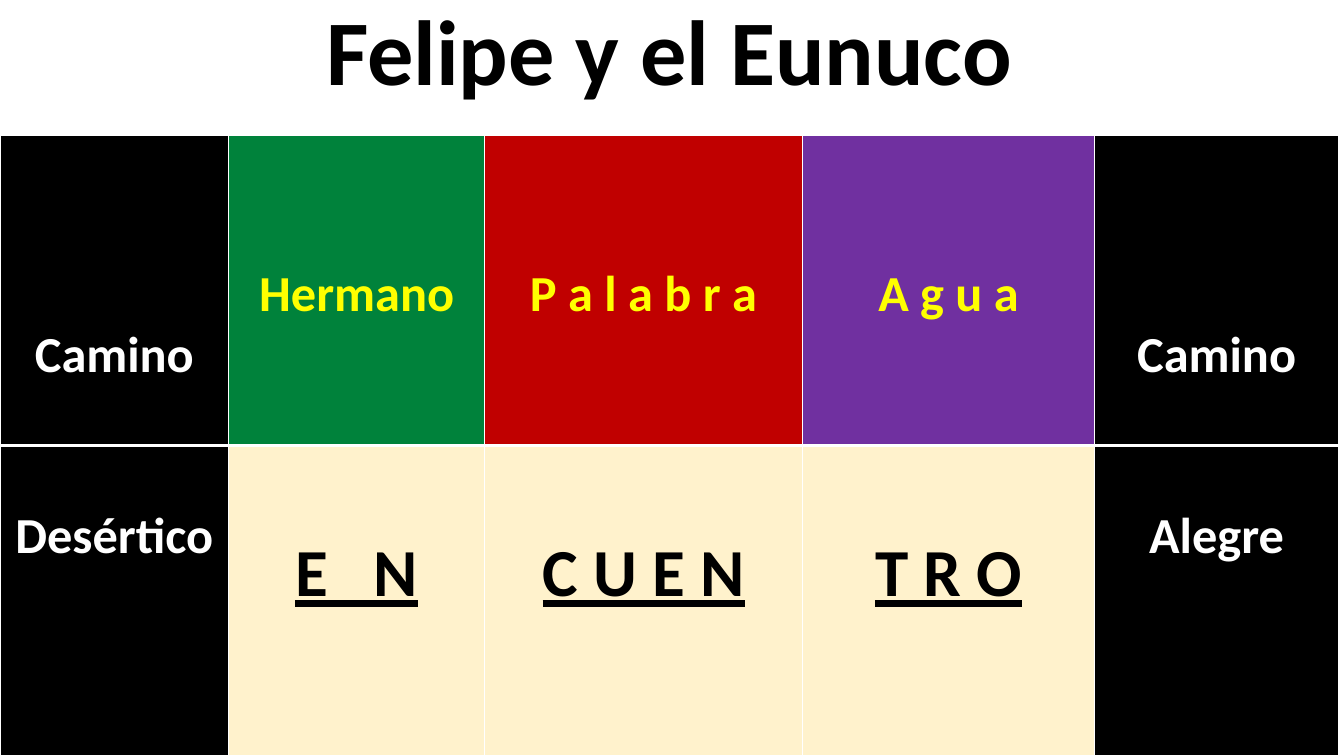
import dataclasses

import lxml.etree
import pptx
import pptx.dml.color
import pptx.enum.text
import pptx.oxml.ns
import pptx.util

Pt = pptx.util.Pt
Color = pptx.dml.color.RGBColor.from_string


@dataclasses.dataclass(frozen=True)
class Theme:
    font: str = "Calibri"
    black: str = "000000"
    white: str = "FFFFFF"
    yellow: str = "FFFF00"
    green: str = "00823B"
    red: str = "C00000"
    purple: str = "7030A0"
    cream: str = "FFF2CC"
    title_size: float = 66
    label_size: float = 36
    meeting_size: float = 48


THEME = Theme()


@dataclasses.dataclass(frozen=True)
class Panel:
    """One table cell; drop is the distance from its top to the text."""
    text: str
    fill: str
    color: str
    drop: float
    size: float = THEME.label_size
    underline: bool = False


def road(text: str, drop: float) -> Panel:
    return Panel(text, THEME.black, THEME.white, drop)


def gift(text: str, fill: str) -> Panel:
    return Panel(text, fill, THEME.yellow, 91.5)


def meeting(text: str) -> Panel:
    return Panel(text, THEME.cream, THEME.black, 62.2, THEME.meeting_size, True)


SLIDE_SIZE = (960, 540)
TABLE_WIDTH = 956.2
TABLE_TOP = 96.5
ROW_HEIGHT = 221.75
COLUMN_WIDTHS = (163.4, 182.9, 226.8, 208.9, 174.2)
THIN, THICK = 1, 3
PANELS = (
    (road("Camino", 135.4), gift("Hermano", THEME.green),
     gift("P a l a b r a", THEME.red), gift("A g u a", THEME.purple),
     road("Camino", 135.4)),
    (road("Desértico", 42.7), meeting("E   N"), meeting("C U E N"),
     meeting("T R O"), road("Alegre", 42.7)),
)


def write_text(text_frame, text: str, *, size: float, color: str,
               underline: bool = False, line_spacing: float = 1.0) -> None:
    paragraph = text_frame.paragraphs[0]
    paragraph.alignment = pptx.enum.text.PP_ALIGN.CENTER
    paragraph.line_spacing = line_spacing
    run = paragraph.add_run()
    run.text = text
    run.font.name = THEME.font
    run.font.size = Pt(size)
    run.font.bold = True
    run.font.underline = underline
    run.font.color.rgb = Color(color)


def set_borders(cell, top: float, bottom: float) -> None:
    properties = cell._tc.get_or_add_tcPr()
    widths = {"a:lnL": THIN, "a:lnR": THIN, "a:lnT": top, "a:lnB": bottom}
    for index, (tag, width) in enumerate(widths.items()):
        line = lxml.etree.Element(pptx.oxml.ns.qn(tag), w=str(Pt(width)))
        fill = lxml.etree.SubElement(line, pptx.oxml.ns.qn("a:solidFill"))
        lxml.etree.SubElement(fill, pptx.oxml.ns.qn("a:srgbClr"), val=THEME.white)
        properties.insert(index, line)


def draw_panel(cell, panel: Panel, top: float, bottom: float) -> None:
    cell.fill.solid()
    cell.fill.fore_color.rgb = Color(panel.fill)
    cell.margin_top = Pt(panel.drop)
    cell.vertical_anchor = pptx.enum.text.MSO_ANCHOR.TOP
    write_text(cell.text_frame, panel.text, size=panel.size,
               color=panel.color, underline=panel.underline)
    set_borders(cell, top, bottom)


def draw_title(slide) -> None:
    shape = slide.shapes.add_textbox(0, 0, Pt(TABLE_WIDTH), Pt(TABLE_TOP))
    text_frame = shape.text_frame
    text_frame.word_wrap = True
    text_frame.margin_top = Pt(3.8)
    text_frame.vertical_anchor = pptx.enum.text.MSO_ANCHOR.TOP
    write_text(text_frame, "Felipe y el Eunuco", size=THEME.title_size,
               color=THEME.black, line_spacing=0.9)


def draw_table(slide) -> None:
    table = slide.shapes.add_table(
        len(PANELS), len(COLUMN_WIDTHS), 0, Pt(TABLE_TOP),
        Pt(TABLE_WIDTH), Pt(ROW_HEIGHT * len(PANELS))).table
    for column, width in zip(table.columns, COLUMN_WIDTHS):
        column.width = Pt(width)
    # The thick rule separates the two rows
    borders = ((THIN, THICK), (THICK, THIN))
    for row, panels, (top, bottom) in zip(table.rows, PANELS, borders):
        row.height = Pt(ROW_HEIGHT)
        for cell, panel in zip(row.cells, panels):
            draw_panel(cell, panel, top, bottom)


def main() -> None:
    presentation = pptx.Presentation()
    presentation.slide_width, presentation.slide_height = map(Pt, SLIDE_SIZE)
    slide = presentation.slides.add_slide(presentation.slide_layouts[6])
    draw_title(slide)
    draw_table(slide)
    presentation.save("out.pptx")


if __name__ == "__main__":
    main()
